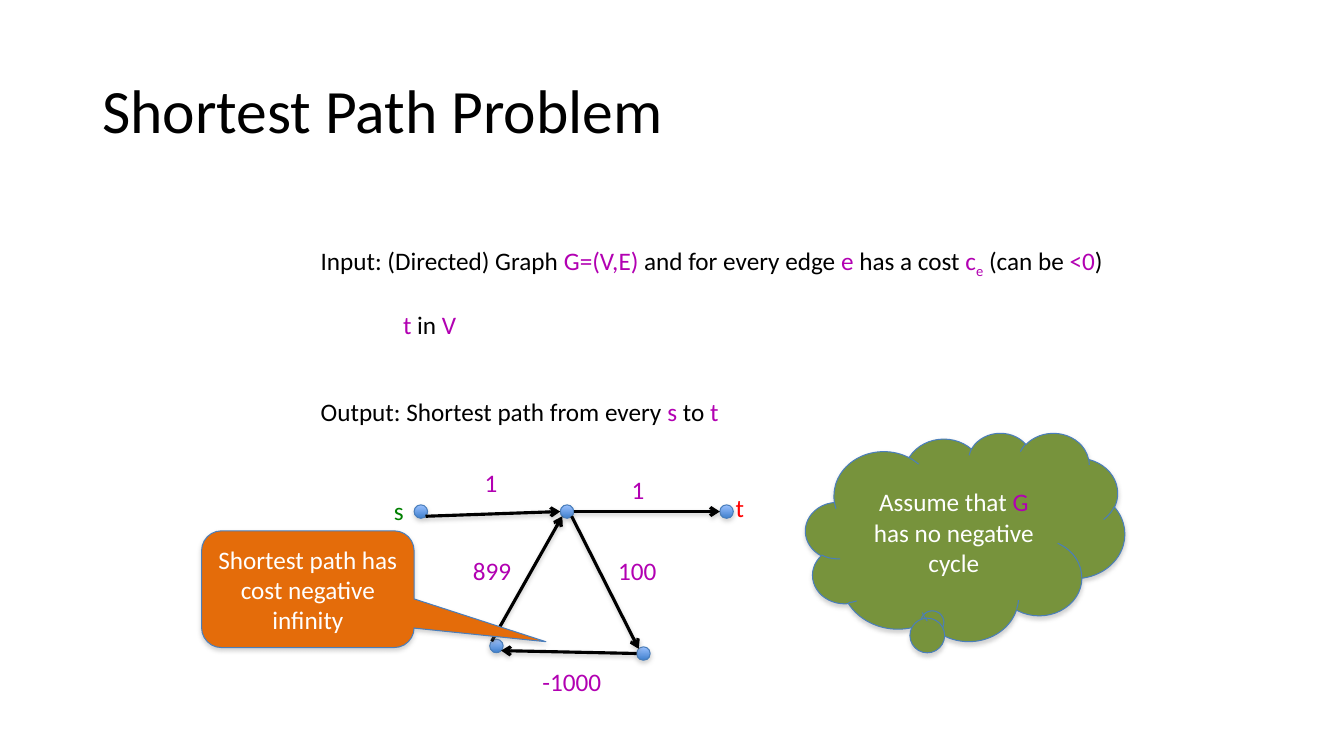
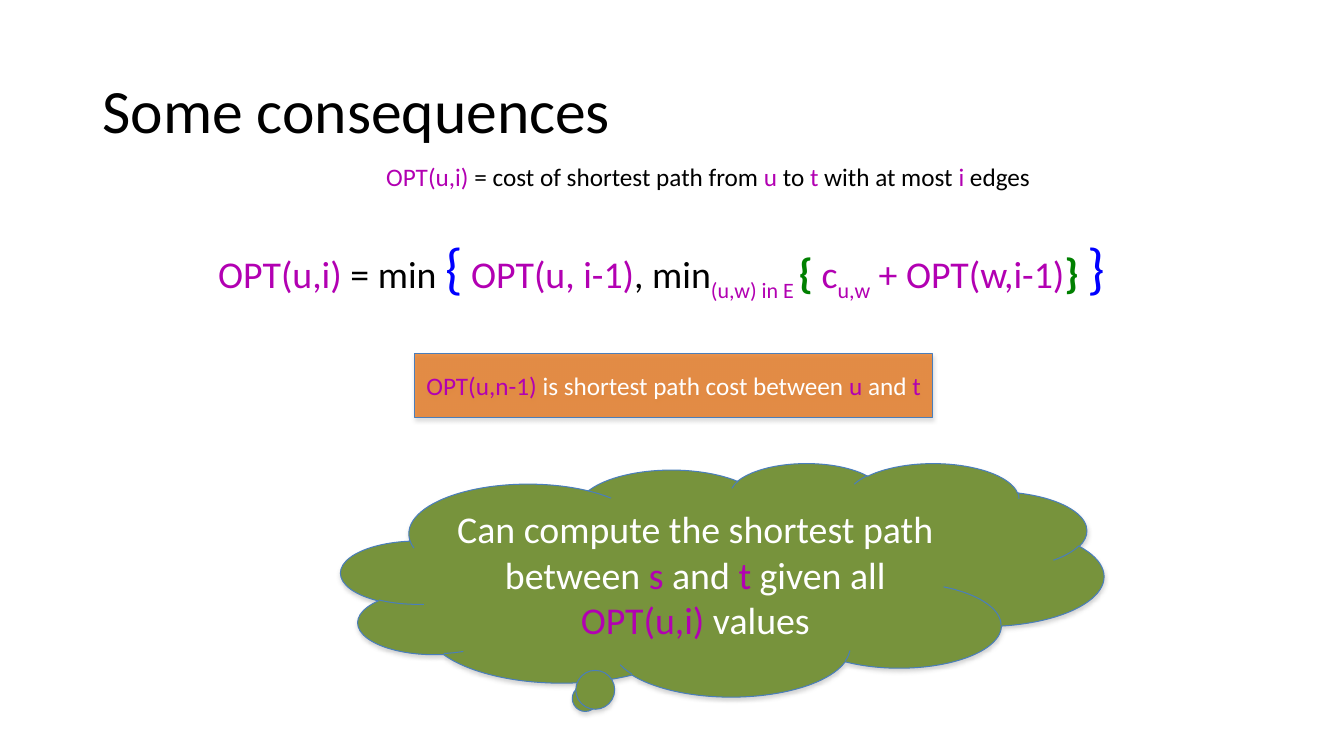
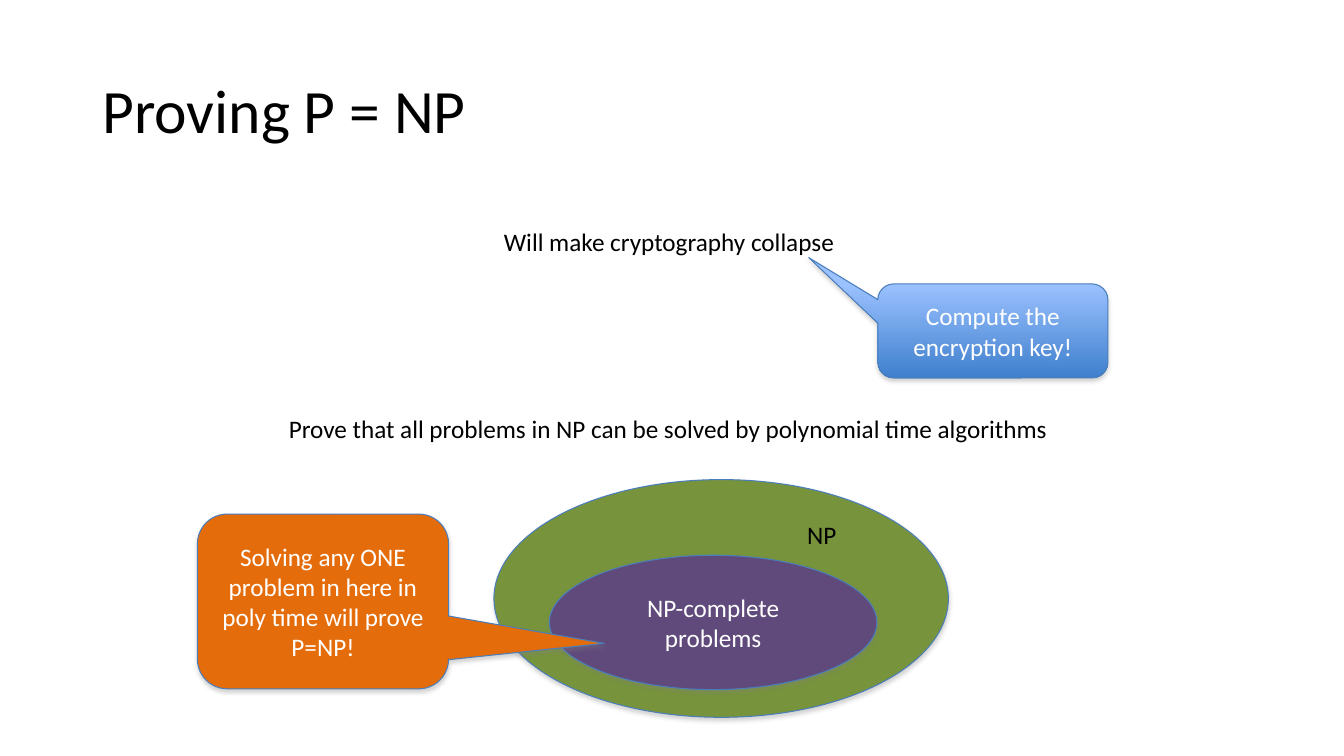
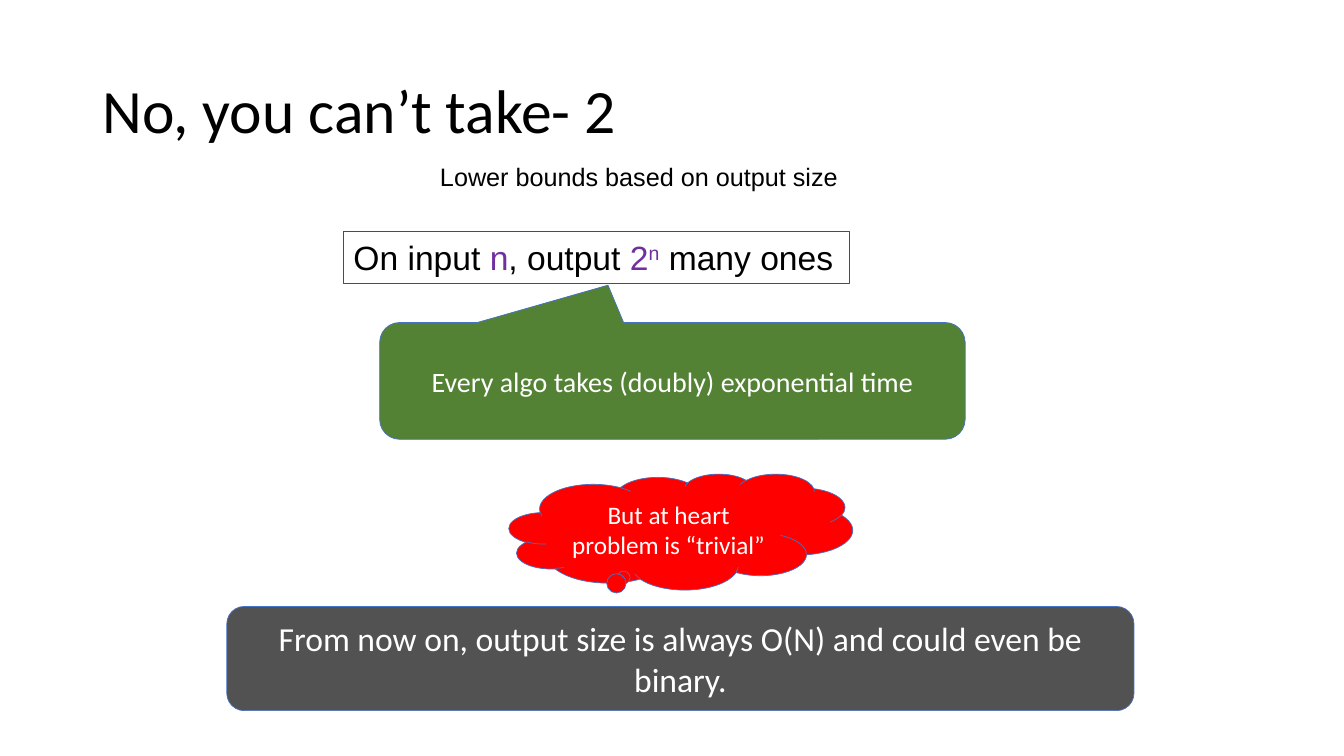
from lxml import etree
from pptx import Presentation
from pptx.dml.color import RGBColor
from pptx.enum.shapes import MSO_CONNECTOR, MSO_SHAPE
from pptx.enum.text import MSO_ANCHOR, MSO_AUTO_SIZE, PP_ALIGN
from pptx.oxml.ns import qn
from pptx.util import Inches, Pt

STRAIGHT = MSO_CONNECTOR.STRAIGHT
RECTANGLE = MSO_SHAPE.RECTANGLE
ROUNDED = MSO_SHAPE.ROUNDED_RECTANGLE
ELLIPSE = MSO_SHAPE.OVAL
BUBBLE = MSO_SHAPE.ROUNDED_RECTANGULAR_CALLOUT
CLOUD = MSO_SHAPE.CLOUD_CALLOUT
MIDDLE, TOP = MSO_ANCHOR.MIDDLE, MSO_ANCHOR.TOP
CENTER, LEFT = PP_ALIGN.CENTER, PP_ALIGN.LEFT
GROW, FIXED = MSO_AUTO_SIZE.SHAPE_TO_FIT_TEXT, MSO_AUTO_SIZE.NONE

COLORS = {
    "black": "000000", "white": "FFFFFF", "shadow": "808080",
    "math": "B200B2", "violet": "7030A0", "blue": "0000FF",
    "green": "008000", "red": "FF0000",
    "edge": "4A7EBB", "flat edge": "4472C4",
    "sky": "9BC1FF", "ocean": "3F80CD",
    "orange": "E46C0A", "olive": "77933C", "plum": "604A7B",
    "leaf": "548235", "slate": "525252",
}
COLUMNS, ROWS = 160, 90
WIDTH, HEIGHT = Inches(13.333), Inches(7.5)
LINE_ROWS = 4.8


def rgb(name):
    return RGBColor.from_string(COLORS[name])


def across(columns):
    return round(WIDTH * columns / COLUMNS)


def down(rows):
    return round(HEIGHT * rows / ROWS)


def place(left, top, width, height=LINE_ROWS):
    return across(left), down(top), across(width), down(height)


def math(text, **style):
    """Pair a piece of text with the colour of mathematical terms."""
    return text, {"color": "math", **style}


def add_span(para, text, size=18, color="black", font="Calibri",
             bold=False, shift=0):
    """Add a run; shift raises or lowers it by a percentage of its size."""
    span = para.add_run()
    span.text = text
    span.font.size = Pt(size)
    span.font.name = font
    span.font.bold = bold
    span.font.color.rgb = rgb(color)
    if shift:
        span.font._element.set("baseline", str(shift * 1000))


def add_shadow(shape, opacity, distance):
    """Put a soft grey shadow below a shape or connector."""
    properties = shape._element.spPr
    effects = properties.find(qn("a:effectLst"))
    if effects is None:
        effects = etree.SubElement(properties, qn("a:effectLst"))
    shadow = etree.SubElement(
        effects, qn("a:outerShdw"), blurRad=str(Pt(3.1)),
        dist=str(Pt(distance)), dir="5400000", rotWithShape="0")
    color = etree.SubElement(shadow, qn("a:srgbClr"), val=COLORS["shadow"])
    etree.SubElement(color, qn("a:alpha"), val=str(opacity * 1000))


class Deck:
    """The presentation, its shared style and the page being filled."""

    def __init__(self):
        self.file = Presentation()
        self.file.slide_width, self.file.slide_height = WIDTH, HEIGHT
        self.page = None

    def new_page(self, title):
        self.page = self.file.slides.add_slide(self.file.slide_layouts[6])
        box = self.page.shapes.add_textbox(*place(11, 4.8, 138, 17.4))
        para = self.put_spans(box, [title], anchor=MIDDLE, size=44)
        para.line_spacing = 0.9

    def put_spans(self, box, spans, anchor=TOP, align=LEFT, wrap=True,
                  **style):
        """Fill a box with one paragraph; spans are texts or (text, style)."""
        frame = box.text_frame
        frame.word_wrap = wrap
        frame.auto_size = FIXED if wrap else GROW
        frame.vertical_anchor = anchor
        para = frame.paragraphs[0]
        para.alignment = align
        for span in spans:
            text, extra = (span, {}) if isinstance(span, str) else span
            add_span(para, text, **{**style, **extra})
        return para

    def text(self, area, *spans, border=None, **style):
        box = self.page.shapes.add_textbox(*place(*area))
        if border:
            box.line.color.rgb = rgb(border)
            box.line.width = Pt(0.75)
        self.put_spans(box, spans, wrap=False, **style)

    def shape(self, kind, area, *spans, fill=None, opacity=100, adjust=(),
              flat=False, size=18):
        """Add a preset shape; without a fill it gets the blue gradient."""
        shape = self.page.shapes.add_shape(kind, *place(*area))
        for index, value in enumerate(adjust):
            shape.adjustments[index] = value
        if fill:
            shape.fill.solid()
            shape.fill.fore_color.rgb = rgb(fill)
        else:
            shape.fill.gradient()
            shape.fill.gradient_angle = 270
            for stop, name in zip(shape.fill.gradient_stops, ("sky", "ocean")):
                stop.color.rgb = rgb(name)
        if opacity < 100:
            color = shape._element.spPr.find(qn("a:solidFill"))[0]
            etree.SubElement(color, qn("a:alpha"), val=str(opacity * 1000))
        shape.line.color.rgb = rgb("flat edge" if flat else "edge")
        shape.line.width = Pt(0.5 if flat else 0.75)
        shape.shadow.inherit = False
        if not flat:
            add_shadow(shape, 35, 1.8)
        if spans:
            self.put_spans(shape, spans, anchor=MIDDLE, align=CENTER,
                           size=size, color="white")

    def arrow(self, start, end):
        arrow = self.page.shapes.add_connector(
            STRAIGHT, across(start[0]), down(start[1]),
            across(end[0]), down(end[1]))
        arrow.line.color.rgb = rgb("black")
        arrow.line.width = Pt(2.25)
        outline = arrow._element.spPr.find(qn("a:ln"))
        etree.SubElement(outline, qn("a:tailEnd"), type="arrow")
        add_shadow(arrow, 38, 1.6)

    def graph(self, nodes, edges):
        """Draw nodes by centre, and edges between named points of their rims."""
        radius = 0.8
        slant = 0.7 * radius
        rim = {"w": (-radius, 0), "e": (radius, 0),
               "nw": (-slant, -slant), "sw": (-slant, slant),
               "se": (slant, slant)}

        def point(node, side):
            return [a + b for a, b in zip(nodes[node], rim[side])]

        for x, y in nodes.values():
            self.shape(ELLIPSE, (x - radius, y - radius, 2 * radius, 2 * radius))
        for start, start_side, end, end_side in edges:
            self.arrow(point(start, start_side), point(end, end_side))


def shortest_path(deck):
    deck.new_page("Shortest Path Problem")
    deck.text((37, 28.6, 96.6), "Input: (Directed) Graph ", math("G=(V,E)"),
              " and for every edge ", math("e"), " has a cost ", math("c"),
              math("e", shift=-25), " (can be ", math("<0"), ")")
    deck.text((46.8, 36.2, 8.8), math("t"), " in ", math("V"))
    deck.text((37, 46.6, 50.3), "Output: Shortest path from every ",
              math("s"), " to ", math("t"))
    deck.graph(
        {"s": (50.1, 60.9), "hub": (67.5, 60.9), "t": (86.5, 60.9),
         "right": (76.6, 77.8), "left": (59.1, 76.9)},
        [("s", "se", "hub", "w"), ("hub", "e", "t", "w"),
         ("hub", "se", "right", "nw"), ("right", "w", "left", "se"),
         ("left", "nw", "hub", "sw")])
    for label, color, left, top, width in [
            ("1", "math", 56.5, 55.1, 4), ("1", "math", 74, 55.9, 4),
            ("100", "math", 72.4, 65.5, 7.1),
            ("-1000", "math", 63.4, 78.7, 9.5),
            ("899", "math", 55.1, 65.5, 7.1),
            ("s", "green", 45.7, 58.4, 3.6), ("t", "red", 86.4, 58, 3.5)]:
        deck.text((left, top, width), label, color=color)
    deck.shape(BUBBLE, (24, 63.2, 25.3, 13.9),
               "Shortest path has cost negative infinity",
               fill="orange", adjust=(1.12, 0.45, 0.17))
    deck.shape(CLOUD, (95.9, 51.5, 38, 24.8), "Assume that ", math("G"),
               " has no negative cycle", fill="olive", adjust=(-0.1, 0.4))


def consequences(deck):
    deck.new_page("Some consequences")
    deck.text((44.8, 18.6, 79.2), math("OPT(u,i) "),
              "= cost of shortest path from ", math("u"), " to ", math("t"),
              " with at most ", math("i"), " edges")
    outer = {"size": 40, "color": "blue"}
    inner = {"size": 30, "color": "green", "bold": True}
    deck.text((24.8, 27.1, 111.7, 9.2), math("OPT(u,i)"), " = min ",
              ("{", outer), " ", math("OPT(u, i-1)"), ", min",
              math("(u,w) in E ", shift=-25), ("{", inner), " ", math("c"),
              math("u,w", shift=-25), math(" + OPT(w,i-1)"), ("}", inner),
              " ", ("}", outer), size=27)
    deck.shape(RECTANGLE, (49.4, 42.1, 61.6, 7.6), math("OPT(u,n-1) "),
               "is shortest path cost between ", math("u"), " and ",
               math("t"), fill="orange", opacity=72)
    deck.shape(CLOUD, (40.6, 55.1, 90.8, 27.8),
               "Can compute the shortest path between ", math("s"), " and ",
               math("t"), " given all ", math("OPT(u,i) "), "values",
               fill="olive", adjust=(-0.18, 0.51), size=27)


def proving(deck):
    deck.new_page("Proving P = NP")
    deck.text((58.8, 26.4, 42.1), "Will make cryptography collapse")
    deck.shape(BUBBLE, (104.5, 33.8, 27.4, 11.2),
               "Compute the encryption key!", adjust=(-0.8, -0.78, 0.17))
    deck.text((33.2, 48.6, 93.6), "Prove that all problems in NP can be "
              "solved by polynomial time algorithms")
    deck.shape(ELLIPSE, (58.8, 57.1, 54.1, 28.3), fill="olive")
    deck.text((94.9, 61.2, 6), "NP")
    deck.shape(ELLIPSE, (65.4, 66.1, 39, 16), "NP-complete problems",
               fill="plum")
    deck.shape(BUBBLE, (23.5, 61.2, 29.9, 20.8), "Solving any ONE problem in "
               "here in poly time will prove P=NP!",
               fill="orange", adjust=(1.12, 0.24, 0.17))


def output_size(deck):
    deck.new_page("No, you can’t take- 2")
    deck.text((51.2, 18.6, 50.3), "Lower bounds based on output size",
              font="Arial")
    violet = {"color": "violet"}
    deck.text((40.9, 27.6, 60.2, 6.1), "On input ", ("n", violet),
              ", output ", ("2", violet), ("n", {**violet, "shift": 30}),
              " many ones", border="red", font="Arial", size=24)
    deck.shape(BUBBLE, (45.2, 38.4, 69.7, 13.9),
               "Every algo takes (doubly) exponential time",
               fill="leaf", adjust=(-0.11, -0.82, 0.17), flat=True, size=20)
    deck.shape(CLOUD, (60.6, 56.4, 40.9, 13.8),
               "But at heart problem is “trivial”",
               fill="red", adjust=(-0.16, 0.38), flat=True)
    deck.shape(ROUNDED, (27, 72.2, 108, 12.4), "From now on, output size is "
               "always O(N) and could even be binary.",
               fill="slate", flat=True, size=24)


def main():
    deck = Deck()
    for build in (shortest_path, consequences, proving, output_size):
        build(deck)
    deck.file.save("out.pptx")


if __name__ == "__main__":
    main()
